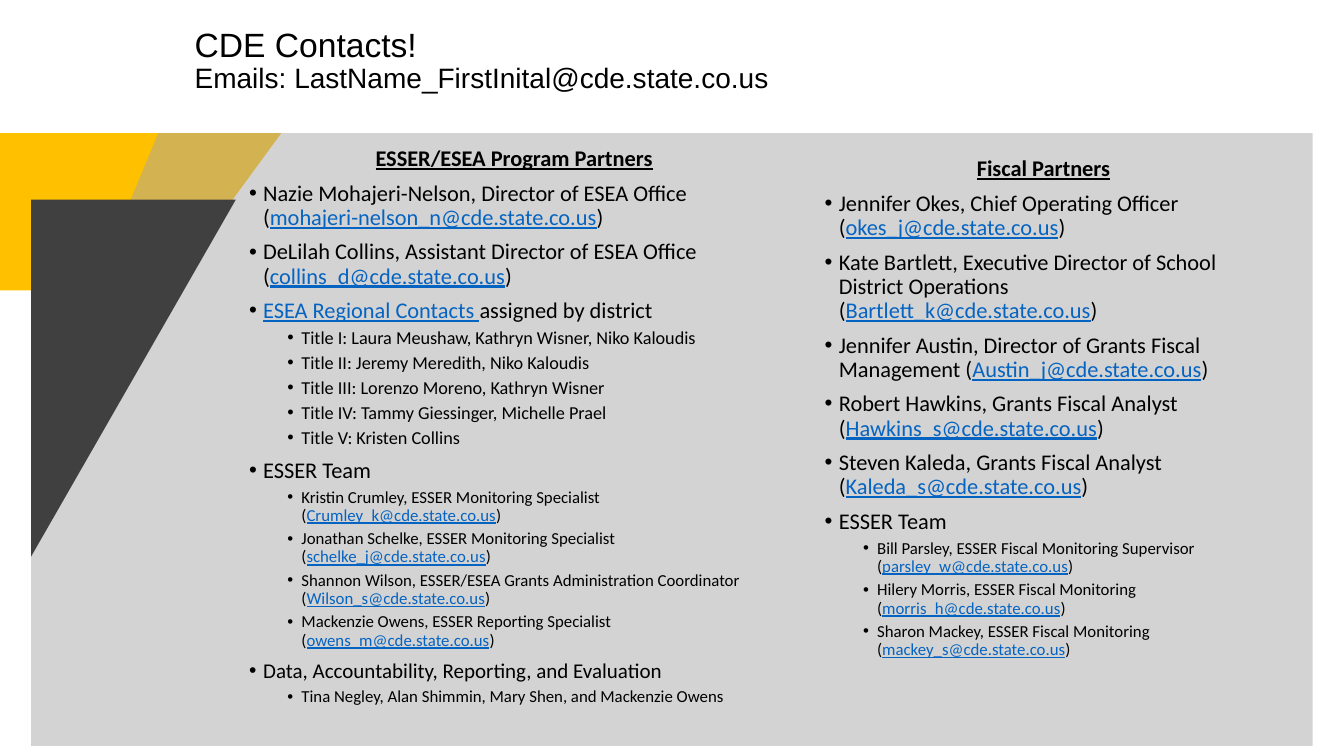
"""Build the CDE contacts slide with program and fiscal partner lists."""
from dataclasses import dataclass

from lxml import etree
from pptx import Presentation
from pptx.dml.color import RGBColor
from pptx.enum import text
from pptx.oxml import ns
from pptx.util import Inches, Pt


@dataclass(frozen=True)
class Theme:
    ink: str = "000000"
    link: str = "0563C1"
    gold: str = "FFC000"
    panel: str = "A6A6A6"
    dark: str = "404040"
    title_font: str = "Arial"
    body_font: str = "Calibri"
    title: int = 24
    subtitle: int = 20
    body: int = 16
    group: int = 15
    titles: int = 13
    team: int = 12


theme = Theme()


def add_text(tf, content, size, font=theme.body_font, heading=False, level=None, before=0,
             align=text.PP_ALIGN.LEFT):
    """Add one paragraph; every second piece between bars is a link."""
    p = tf.add_paragraph() if tf.text else tf.paragraphs[0]
    p.alignment, p.line_spacing, p.space_before = align, 0.9, Pt(before)
    if level is not None:
        p.level = level
        pPr = p._p.get_or_add_pPr()
        pPr.set("marL", str(Inches(0.14 + 0.38 * level)))
        pPr.set("indent", str(Inches(-0.14)))
        bullet_color = etree.SubElement(pPr, ns.qn("a:buClr"))
        etree.SubElement(bullet_color, ns.qn("a:srgbClr")).set("val", theme.ink)
        etree.SubElement(pPr, ns.qn("a:buFont")).set("typeface", "Arial")
        etree.SubElement(pPr, ns.qn("a:buChar")).set("char", "•")
    for i, piece in enumerate(content.split("|")):
        if piece:
            is_link = i % 2 == 1
            r = p.add_run()
            r.text = piece
            r.font.name, r.font.size, r.font.bold = font, Pt(size), heading
            r.font.underline = heading or is_link
            r.font.color.rgb = RGBColor.from_string(theme.link if is_link else theme.ink)


def set_frame(tf, bottom=0):
    """Remove the insets and anchor wrapped text at the top."""
    tf.margin_left = tf.margin_top = tf.margin_right = 0
    tf.margin_bottom = Inches(bottom)
    tf.word_wrap = True
    tf.auto_size = text.MSO_AUTO_SIZE.NONE
    tf.vertical_anchor = text.MSO_ANCHOR.TOP


prs = Presentation()
prs.slide_width, prs.slide_height = Inches(13.33), Inches(7.5)
s = prs.slides.add_slide(prs.slide_layouts[5])

title = s.shapes.title
title.left, title.top, title.width, title.height = map(Inches, (1.93, 0.28, 6.65, 0.83))
set_frame(title.text_frame)
add_text(title.text_frame, "CDE Contacts!", theme.title, font=theme.title_font)
add_text(title.text_frame, "Emails: LastName_FirstInital@cde.state.co.us", theme.subtitle,
         font=theme.title_font)

gold_corner = [(0, 1.32), (2.79, 1.32), (1.65, 2.88), (0, 2.88)]
panel = [(1.57, 1.32), (13.02, 1.32), (13.02, 7.4), (0.31, 7.4), (0.31, 4.38), (1.21, 2.19)]
dark_wedge = [(0.31, 1.98), (2.34, 1.98), (0.31, 5.52)]
outlines = [(gold_corner, theme.gold, 100), (panel, theme.panel, 49),
            (dark_wedge, theme.dark, 100)]
for points, color, opacity in outlines:
    corners = [(Inches(x), Inches(y)) for x, y in points]
    builder = s.shapes.build_freeform(*corners[0])
    builder.add_line_segments(corners[1:], close=True)
    sp = builder.convert_to_shape()
    sp.shadow.inherit = False
    sp.fill.solid()
    sp.fill.fore_color.rgb = RGBColor.from_string(color)
    sp.line.fill.background()
    if opacity < 100:
        clr = sp._element.spPr.find(".//" + ns.qn("a:srgbClr"))
        etree.SubElement(clr, ns.qn("a:alpha")).set("val", str(opacity * 1000))

program_partners = [
    (0, theme.body, [
        "Nazie Mohajeri-Nelson, Director of ESEA Office (|mohajeri-nelson_n@cde.state.co.us|)",
        "DeLilah Collins, Assistant Director of ESEA Office (|collins_d@cde.state.co.us|)",
        "|ESEA Regional Contacts |assigned by district"]),
    (1, theme.titles, [
        "Title I: Laura Meushaw, Kathryn Wisner, Niko Kaloudis",
        "Title II: Jeremy Meredith, Niko Kaloudis",
        "Title III: Lorenzo Moreno, Kathryn Wisner",
        "Title IV: Tammy Giessinger, Michelle Prael",
        "Title V: Kristen Collins"]),
    (0, theme.body, ["ESSER Team"]),
    (1, theme.team, [
        "Kristin Crumley, ESSER Monitoring Specialist (|Crumley_k@cde.state.co.us|)",
        "Jonathan Schelke, ESSER Monitoring Specialist (|schelke_j@cde.state.co.us|)",
        "Shannon Wilson, ESSER/ESEA Grants Administration Coordinator "
        "(|Wilson_s@cde.state.co.us|)",
        "Mackenzie Owens, ESSER Reporting Specialist (|owens_m@cde.state.co.us|)"]),
    (0, theme.group, ["Data, Accountability, Reporting, and Evaluation"]),
    (1, theme.team, ["Tina Negley, Alan Shimmin, Mary Shen, and Mackenzie Owens"]),
]
fiscal_partners = [
    (0, theme.body, [
        "Jennifer Okes, Chief Operating Officer (|okes_j@cde.state.co.us|)",
        "Kate Bartlett, Executive Director of School District Operations "
        "(|Bartlett_k@cde.state.co.us|)",
        "Jennifer Austin, Director of Grants Fiscal Management (|Austin_j@cde.state.co.us|)",
        "Robert Hawkins, Grants Fiscal Analyst (|Hawkins_s@cde.state.co.us|)",
        "Steven Kaleda, Grants Fiscal Analyst (|Kaleda_s@cde.state.co.us|)",
        "ESSER Team"]),
    (1, theme.team, [
        "Bill Parsley, ESSER Fiscal Monitoring Supervisor (|parsley_w@cde.state.co.us|)",
        "Hilery Morris, ESSER Fiscal Monitoring (|morris_h@cde.state.co.us|)",
        "Sharon Mackey, ESSER Fiscal Monitoring (|mackey_s@cde.state.co.us|)"]),
]
columns = [
    ("ESSER/ESEA Program Partners", (2.47, 1.46, 5.26, 5.34), program_partners),
    ("Fiscal Partners", (8.18, 1.56, 4.34, 5.34), fiscal_partners),
]
for heading, box, groups in columns:
    tf = s.shapes.add_textbox(*map(Inches, box)).text_frame
    set_frame(tf, bottom=0.03)
    add_text(tf, heading, theme.body, heading=True, align=text.PP_ALIGN.CENTER)
    for level, size, entries in groups:
        for entry in entries:
            add_text(tf, entry, size, level=level, before=3.8 if level else 7.5)

prs.save("out.pptx")
